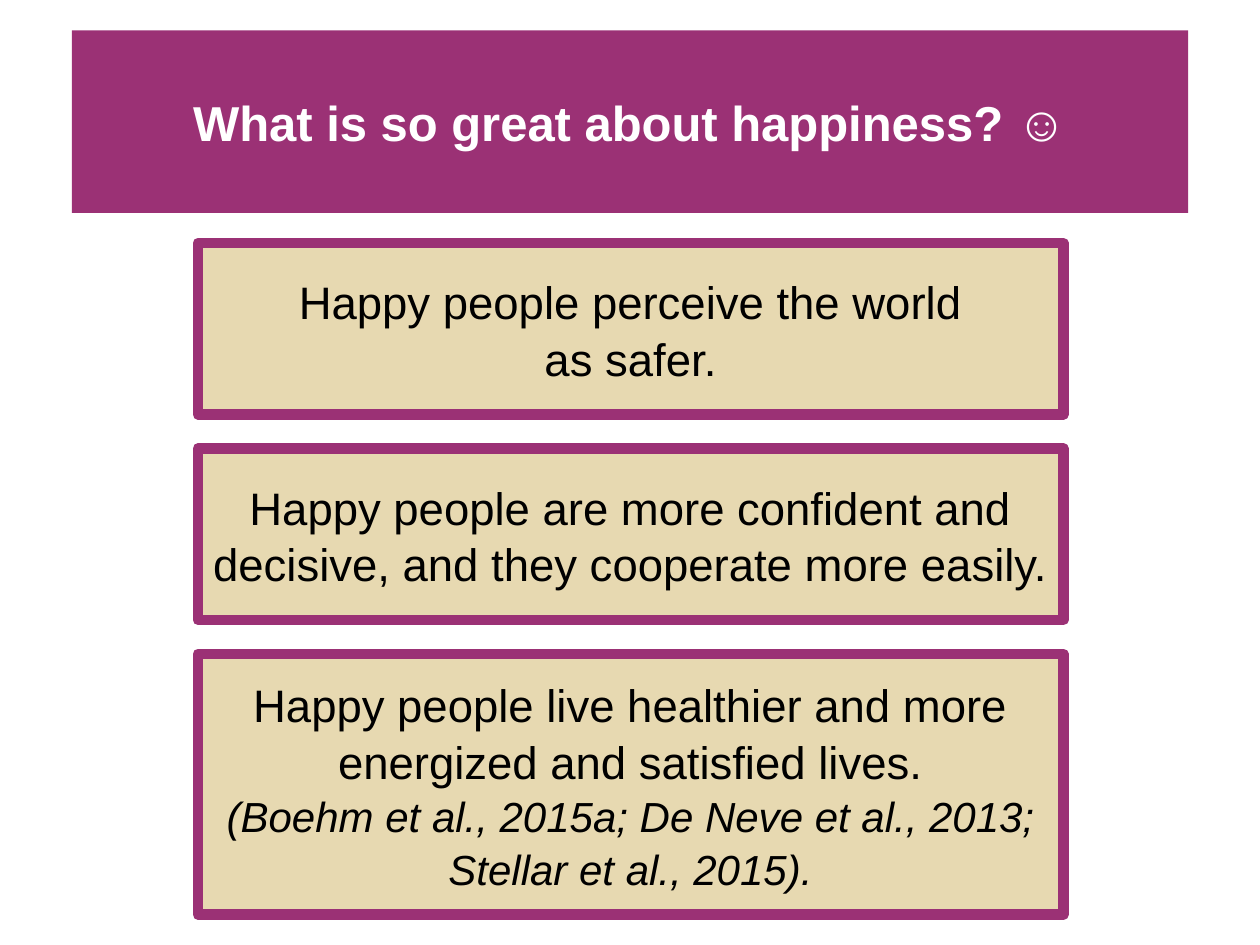
from pptx import Presentation
from pptx.dml.color import RGBColor
from pptx.enum.shapes import MSO_SHAPE
from pptx.enum.text import MSO_ANCHOR, MSO_AUTO_SIZE, PP_ALIGN
from pptx.util import Inches, Pt

PURPLE, SAND, WHITE, BLACK = "9B3175", "E7D9B1", "FFFFFF", "000000"
FONT = "Arial"
BOX_LEFT, BOX_WIDTH, BOX_TOP, BOX_GAP = 1.57, 6.87, 1.93, 0.27

# Each box: height, then its paragraphs as (text, size, italic)
BOXES = [
    (1.36, [("Happy people perceive the world", 26, False),
            ("as safer.", 26, False)]),
    (1.36, [("Happy people are more confident and decisive, "
             "and they cooperate more easily.", 26, False)]),
    (2.07, [("Happy people live healthier and more energized "
             "and satisfied lives.", 26, False),
            ("(Boehm et al., 2015a; De Neve et al., 2013; "
             "Stellar et al., 2015).", 24, True)]),
]


def color(value):
    return RGBColor.from_string(value)


def fill_shape(shape, value):
    shape.fill.solid()
    shape.fill.fore_color.rgb = color(value)


def prepare_frame(shape):
    frame = shape.text_frame
    frame.word_wrap = True
    frame.auto_size = MSO_AUTO_SIZE.NONE
    frame.vertical_anchor = MSO_ANCHOR.MIDDLE
    return frame


def add_run(paragraph, text, size, value, bold=False, italic=False):
    paragraph.alignment = PP_ALIGN.CENTER
    run = paragraph.add_run()
    run.text = text
    font = run.font
    font.name, font.size = FONT, Pt(size)
    font.bold, font.italic = bold, italic
    font.color.rgb = color(value)


def set_title(slide, text):
    title = slide.shapes.title
    title.left, title.top = Inches(0.57), Inches(0.24)
    title.width, title.height = Inches(8.86), Inches(1.45)
    fill_shape(title, PURPLE)
    frame = prepare_frame(title)
    add_run(frame.paragraphs[0], text, 28, WHITE, bold=True)


def add_box(slide, top, height, paragraphs):
    box = slide.shapes.add_shape(
        MSO_SHAPE.RECTANGLE, Inches(BOX_LEFT), Inches(top),
        Inches(BOX_WIDTH), Inches(height))
    box.shadow.inherit = False
    fill_shape(box, SAND)
    box.line.color.rgb = color(PURPLE)
    box.line.width = Pt(6)
    frame = prepare_frame(box)
    for index, (text, size, italic) in enumerate(paragraphs):
        paragraph = frame.add_paragraph() if index else frame.paragraphs[0]
        paragraph.line_spacing = 1.04
        add_run(paragraph, text, size, BLACK, italic=italic)


def main():
    presentation = Presentation()
    presentation.slide_width = Inches(10)
    presentation.slide_height = Inches(7.5)
    slide = presentation.slides.add_slide(presentation.slide_layouts[5])

    # Title banner
    set_title(slide, "What is so great about happiness? ☺")

    # Stacked statements, equally spaced
    top = BOX_TOP
    for height, paragraphs in BOXES:
        add_box(slide, top, height, paragraphs)
        top += height + BOX_GAP

    presentation.save("out.pptx")


if __name__ == "__main__":
    main()
